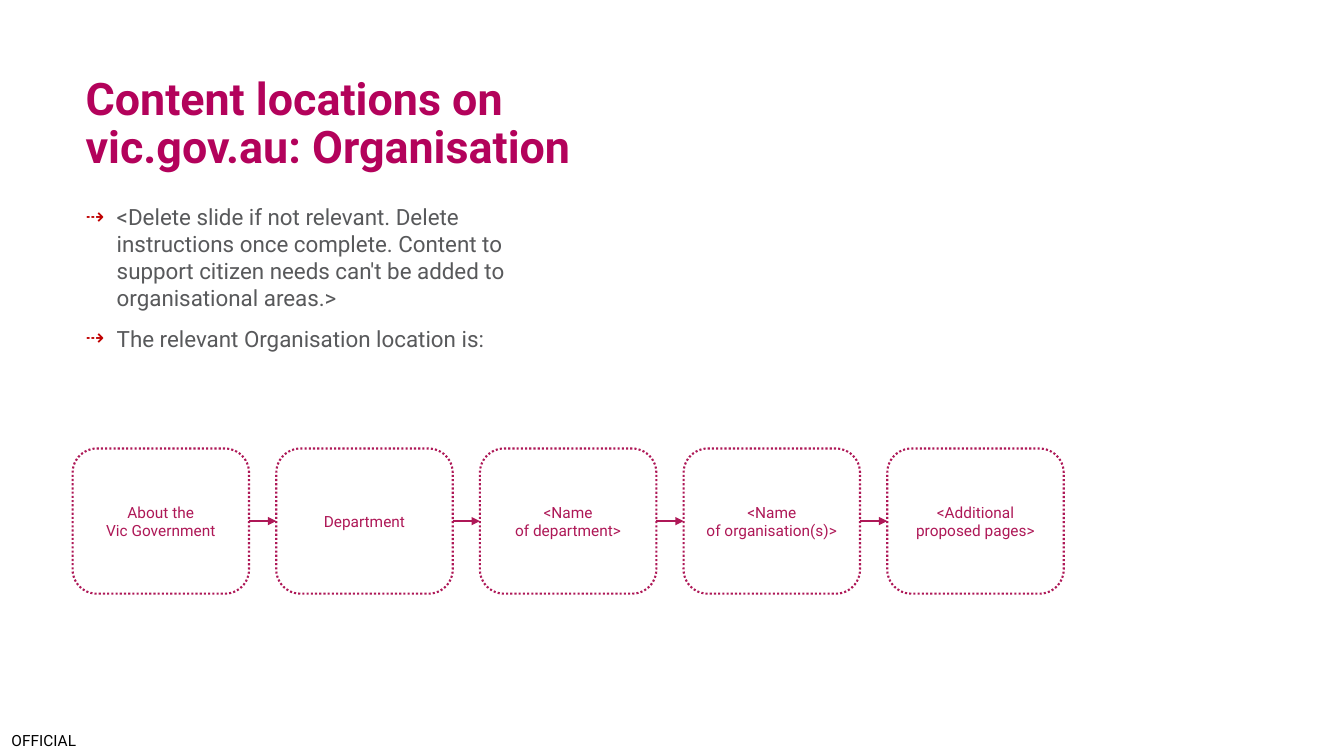
import pptx
import pptx.dml.color
import pptx.enum.dml
import pptx.enum.shapes
import pptx.enum.text
import pptx.oxml
import pptx.oxml.ns
import pptx.util

Inches = pptx.util.Inches
Pt = pptx.util.Pt
RGBColor = pptx.dml.color.RGBColor
Align = pptx.enum.text.PP_ALIGN
Anchor = pptx.enum.text.MSO_ANCHOR

MAGENTA = RGBColor(0xB3, 0x02, 0x5B)
RASPBERRY = RGBColor(0xAE, 0x18, 0x57)
GREY = RGBColor(0x58, 0x59, 0x5B)
BLACK = RGBColor(0x00, 0x00, 0x00)
BULLET_RED = RGBColor(0xC0, 0x00, 0x00)

FONT = "Roboto"
INSTRUCTIONS = [
    "<Delete slide if not relevant. Delete instructions once complete. "
    "Content to support citizen needs can't be added to organisational areas.>",
    "The relevant Organisation location is:",
]
LOCATIONS = [
    "About the\nVic Government",
    "Department",
    "<Name of\u00a0department>",
    "<Name of\u00a0organisation(s)>",
    "<Additional proposed pages>",
]
BOX_LEFT, BOX_TOP, BOX_WIDTH, BOX_HEIGHT = 0.72, 4.45, 1.75, 1.44
BOX_PITCH = 2.02


def set_attributes(target, values):
    for name, value in values.items():
        setattr(target, name, value)


def add_xml(parent, tag, content="", attributes=""):
    namespace = pptx.oxml.ns.nsdecls("a")
    parent.append(pptx.oxml.parse_xml(
        f"<a:{tag} {namespace} {attributes}>{content}</a:{tag}>"))


def write_text(shape, texts, size, color, frame_format, paragraph_format, bold=False):
    """Fill a shape with one paragraph per text, all in the same style."""
    frame = shape.text_frame
    set_attributes(frame, {"word_wrap": True, **frame_format})
    for index, text in enumerate(texts):
        paragraph = frame.paragraphs[0] if index == 0 else frame.add_paragraph()
        paragraph.text = text
        set_attributes(paragraph, paragraph_format)
        for run in paragraph.runs:
            set_attributes(run.font, {"name": FONT, "size": Pt(size), "bold": bold})
            run.font.color.rgb = color


def add_text(slide, left, top, width, height, *text_style, **options):
    box = slide.shapes.add_textbox(
        Inches(left), Inches(top), Inches(width), Inches(height))
    write_text(box, *text_style, **options)
    return box


def add_arrow_bullets(box):
    for paragraph in box.text_frame.paragraphs:
        properties = paragraph._p.get_or_add_pPr()
        properties.set("marL", str(Inches(0.31)))
        properties.set("indent", str(-Inches(0.31)))
        add_xml(properties, "buClr", f'<a:srgbClr val="{BULLET_RED}"/>')
        add_xml(properties, "buFont", attributes=f'typeface="{FONT}"')
        add_xml(properties, "buChar", attributes='char="⇢"')


def add_location(slide, index, text):
    box = slide.shapes.add_shape(
        pptx.enum.shapes.MSO_SHAPE.ROUNDED_RECTANGLE,
        Inches(BOX_LEFT + index * BOX_PITCH), Inches(BOX_TOP),
        Inches(BOX_WIDTH), Inches(BOX_HEIGHT))
    box.shadow.inherit = False
    box.fill.background()
    box.line.color.rgb = RASPBERRY
    set_attributes(box.line, {
        "width": Pt(1.5), "dash_style": pptx.enum.dml.MSO_LINE.ROUND_DOT})
    write_text(box, [text], 11, RASPBERRY,
               {"vertical_anchor": Anchor.MIDDLE}, {"alignment": Align.CENTER})
    return box


def add_arrow(slide, start, end):
    arrow = slide.shapes.add_connector(
        pptx.enum.shapes.MSO_CONNECTOR.STRAIGHT, 0, 0, 0, 0)
    arrow.begin_connect(start, 3)
    arrow.end_connect(end, 1)
    arrow.line.color.rgb = RASPBERRY
    arrow.line.width = Pt(1)
    add_xml(arrow.line._get_or_add_ln(), "tailEnd", attributes='type="triangle"')
    add_xml(arrow._element.spPr, "effectLst")


def main():
    presentation = pptx.Presentation()
    set_attributes(presentation, {
        "slide_width": Inches(13.33), "slide_height": Inches(7.5)})
    slide = presentation.slides.add_slide(presentation.slide_layouts[6])

    # Classification marking
    no_margins = dict.fromkeys(
        ["margin_left", "margin_top", "margin_right", "margin_bottom"], 0)
    add_text(slide, 0, 7.25, 0.87, 0.19, ["OFFICIAL"], 11, BLACK,
             {"vertical_anchor": Anchor.MIDDLE, **no_margins},
             {"alignment": Align.CENTER})

    # Title
    add_text(slide, 0.75, 0.39, 8.48, 1.38,
             ["Content locations on\nvic.gov.au: Organisation"], 32, MAGENTA,
             {"vertical_anchor": Anchor.BOTTOM}, {"line_spacing": 0.9}, bold=True)

    # Instructions
    instructions = add_text(slide, 0.75, 1.97, 4.63, 1.78, INSTRUCTIONS, 16, GREY,
                            {"vertical_anchor": Anchor.TOP}, {"space_before": Pt(10)})
    add_arrow_bullets(instructions)

    # Chain of locations
    boxes = [add_location(slide, index, text) for index, text in enumerate(LOCATIONS)]
    for start, end in zip(boxes, boxes[1:]):
        add_arrow(slide, start, end)

    presentation.save("out.pptx")


if __name__ == "__main__":
    main()
